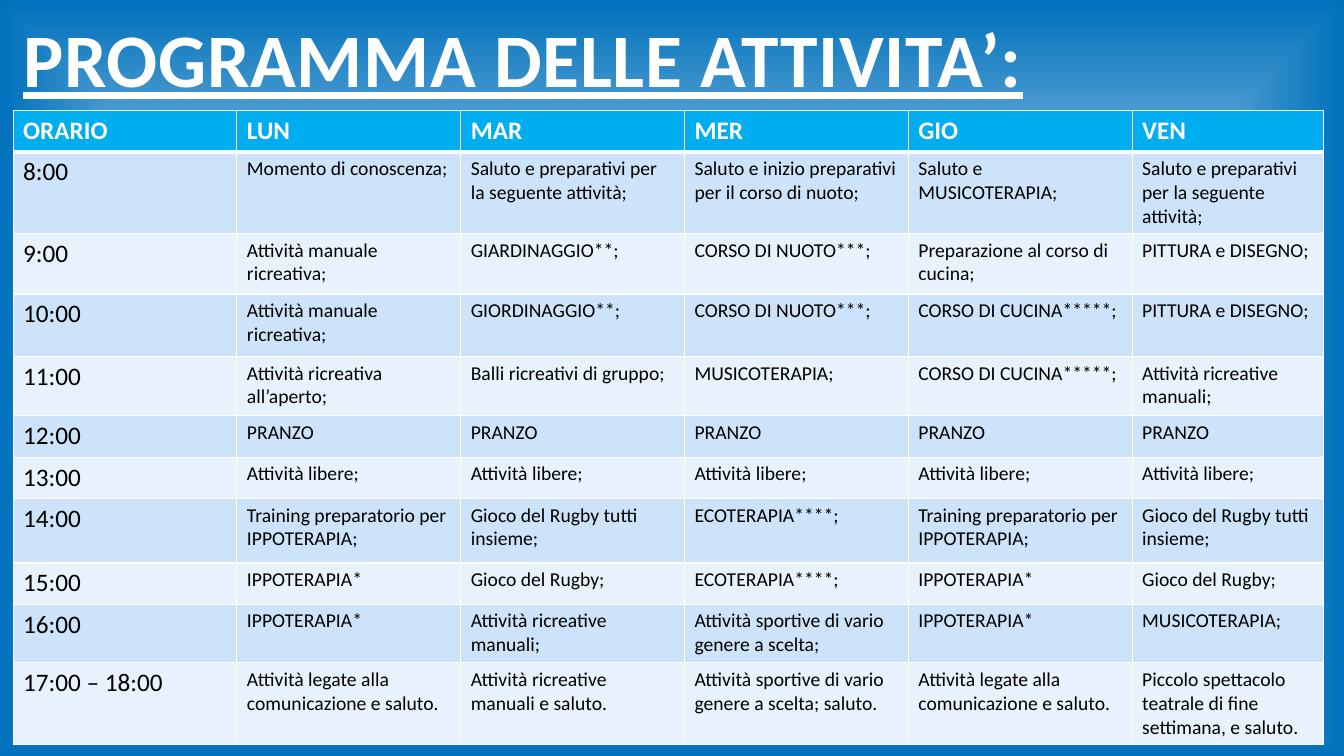
import pptx
import pptx.dml.color
import pptx.enum.text
import pptx.oxml
import pptx.oxml.ns
import pptx.util

WIDTH, HEIGHT = 13.33, 7.5
FONT = "Calibri"
COLORS = {
    "edge": "0071BC", "center": "FFFFFF", "title": "FEFEFE", "glow": "00AEEF",
    "header": "00AEEF", "header_text": "FFFFFF", "text": "000000",
    "odd": "CCE3F9", "even": "E7F2FC", "border": "FFFFFF",
}
COLUMN_WIDTHS = [2.22] * 5 + [1.9]
ROW_HEIGHTS = [0.4, 0.81, 0.6, 0.62, 0.59, 0.41, 0.41, 0.64, 0.41, 0.58, 0.81]

MANUAL = "Attività manuale ricreativa;"
CRAFTS = "Attività ricreative manuali;"
TRAINING = "Training preparatorio per IPPOTERAPIA;"
GREETING = "Saluto e preparativi per la seguente attività;"
FAREWELL = "Attività legate alla comunicazione e saluto."
SWIMMING = "CORSO DI NUOTO***;"
COOKING = "CORSO DI CUCINA*****;"
PAINTING = "PITTURA e DISEGNO;"
RIDING = "IPPOTERAPIA*"
ECOLOGY = "ECOTERAPIA****;"
TEAM_RUGBY = "Gioco del Rugby tutti insieme;"
RUGBY = "Gioco del Rugby;"
SCHEDULE = [
    ["ORARIO", "LUN", "MAR", "MER", "GIO", "VEN"],
    ["8:00", "Momento di conoscenza;", GREETING,
     "Saluto e inizio preparativi per il corso di nuoto;",
     "Saluto e MUSICOTERAPIA;", GREETING],
    ["9:00", MANUAL, "GIARDINAGGIO**;", SWIMMING,
     "Preparazione al corso di cucina;", PAINTING],
    ["10:00", MANUAL, "GIORDINAGGIO**;", SWIMMING, COOKING, PAINTING],
    ["11:00", "Attività ricreativa all’aperto;", "Balli ricreativi di gruppo;",
     "MUSICOTERAPIA;", COOKING, CRAFTS],
    ["12:00"] + ["PRANZO"] * 5,
    ["13:00"] + ["Attività libere;"] * 5,
    ["14:00", TRAINING, TEAM_RUGBY, ECOLOGY, TRAINING, TEAM_RUGBY],
    ["15:00", RIDING, RUGBY, ECOLOGY, RIDING, RUGBY],
    ["16:00", RIDING, CRAFTS, "Attività sportive di vario genere a scelta;",
     RIDING, "MUSICOTERAPIA;"],
    ["17:00 – 18:00", FAREWELL, "Attività ricreative manuali e saluto.",
     "Attività sportive di vario genere a scelta; saluto.", FAREWELL,
     "Piccolo spettacolo teatrale di fine settimana, e saluto."],
]


def rgb(name):
    return pptx.dml.color.RGBColor.from_string(COLORS[name])


def line_xml(tag, color, points):
    return pptx.oxml.parse_xml(
        f'<a:{tag} {pptx.oxml.ns.nsdecls("a")} w="{pptx.util.Pt(points)}">'
        f'<a:solidFill><a:srgbClr val="{COLORS[color]}"/></a:solidFill></a:{tag}>')


def write_text(para, text, color, **formats):
    span = para.add_run()
    span.text = text
    span.font.color.rgb = rgb(color)
    for name, value in {"name": FONT, **formats}.items():
        setattr(span.font, name, value)
    return span


def paint_background(page):
    """Rectangular gradient, white in the middle and blue at the edges."""
    fill = page.background.fill
    fill.solid()
    solid = page.background._cSld.bg.bgPr.find(pptx.oxml.ns.qn("a:solidFill"))
    gradient = pptx.oxml.parse_xml(
        f'<a:gradFill {pptx.oxml.ns.nsdecls("a")} rotWithShape="1"><a:gsLst>'
        f'<a:gs pos="0"><a:srgbClr val="{COLORS["center"]}"/></a:gs>'
        f'<a:gs pos="100000"><a:srgbClr val="{COLORS["edge"]}"/></a:gs></a:gsLst>'
        '<a:path path="rect">'
        '<a:fillToRect l="50000" t="50000" r="50000" b="50000"/></a:path></a:gradFill>')
    gradient.find(pptx.oxml.ns.qn("a:path")).set("path", "shape")
    solid.getparent().replace(solid, gradient)


def place_title(page, left, top, width, height):
    title = page.shapes.title
    for name, value in zip(("left", "top", "width", "height"),
                           (left, top, width, height)):
        setattr(title, name, pptx.util.Inches(value))
    frame = title.text_frame
    frame.word_wrap = True
    frame.auto_size = pptx.enum.text.MSO_AUTO_SIZE.NONE
    frame.vertical_anchor = pptx.enum.text.MSO_ANCHOR.MIDDLE
    para = frame.paragraphs[0]
    para.alignment = pptx.enum.text.PP_ALIGN.LEFT
    para.line_spacing = 0.85
    span = write_text(para, "PROGRAMMA DELLE ATTIVITA’:", "title",
                      size=pptx.util.Pt(54), bold=True, underline=True)
    # Letter spacing and thin outline
    properties = span.font._element
    properties.set("spc", "50")
    properties.insert(0, line_xml("ln", "glow", 0.75))


def format_cell(cell, row, column, text):
    header = row == 0
    # Borders, with a thicker rule under the header
    properties = cell._tc.get_or_add_tcPr()
    for side in ("lnL", "lnR", "lnT", "lnB"):
        thick = (row, side) in ((0, "lnB"), (1, "lnT"))
        properties.append(line_xml(side, "border", 3 if thick else 1))
    cell.fill.solid()
    cell.fill.fore_color.rgb = rgb("header" if header else "odd" if row % 2 else "even")
    write_text(cell.text_frame.paragraphs[0], text,
               "header_text" if header else "text", bold=header,
               size=pptx.util.Pt(18 if header or column == 0 else 14))


def place_schedule(page, left, top, width, height):
    box = page.shapes.add_table(len(SCHEDULE), len(COLUMN_WIDTHS),
                                *map(pptx.util.Inches, (left, top, width, height)))
    table = box.table
    for column, share in zip(table.columns, COLUMN_WIDTHS):
        column.width = pptx.util.Inches(width * share / sum(COLUMN_WIDTHS))
    for row, share in zip(table.rows, ROW_HEIGHTS):
        row.height = pptx.util.Inches(height * share / sum(ROW_HEIGHTS))
    for row, entries in enumerate(SCHEDULE):
        for column, text in enumerate(entries):
            format_cell(table.cell(row, column), row, column, text)


def main():
    deck = pptx.Presentation()
    deck.slide_width = pptx.util.Inches(WIDTH)
    deck.slide_height = pptx.util.Inches(HEIGHT)
    page = deck.slides.add_slide(deck.slide_layouts.get_by_name("Title Only"))
    paint_background(page)
    place_title(page, 0.13, 0.18, 10.92, 0.92)
    place_schedule(page, 0.13, 1.1, sum(COLUMN_WIDTHS), sum(ROW_HEIGHTS))
    deck.save("out.pptx")


if __name__ == "__main__":
    main()
